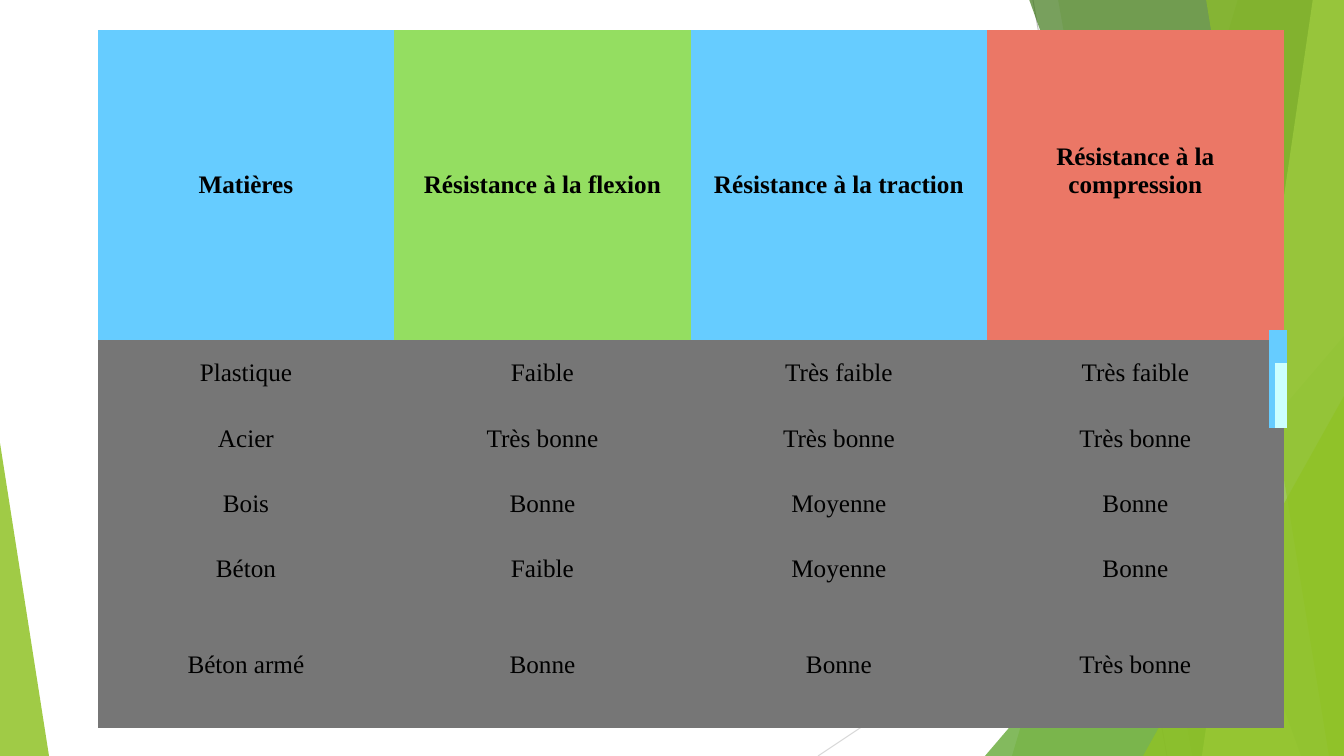
from lxml import etree
from pptx import Presentation, util as u
from pptx.dml.color import RGBColor
from pptx.enum import shapes, text
from pptx.oxml import ns

PX = 914400 / 100.8


def px(*nums):
    return [u.Emu(round(n * PX)) for n in nums]


def paint(fill, hue, alpha=100):
    fill.solid()
    fill.fore_color.rgb = RGBColor.from_string(hue)
    if alpha < 100:
        node = fill._xPr.find(".//" + ns.qn("a:srgbClr"))
        etree.SubElement(node, ns.qn("a:alpha"), val=str(alpha * 1000))


deck = Presentation()
deck.slide_width, deck.slide_height = px(1344, 756)
slide = deck.slides.add_slide(deck.slide_layouts[6])
art = slide.shapes

for ends, hue in [((1033, 0, 1167, 756), "BFBFBF"), ((1344, 406, 818, 756), "D9D9D9")]:
    line = art.add_connector(shapes.MSO_CONNECTOR.STRAIGHT, *px(*ends))
    paint(line.line.fill, hue)
    line.line.width = u.Pt(0.75)
    etree.SubElement(line._element.spPr, ns.qn("a:effectLst"))

bands = [
    ("blade", (1238, 1012), "90C226", 30),
    ("blade", (1058, 1192), "90C226", 20),
    ("wedge", (985, 336, 359, 420, 1), "54A021", 72),
    ("blade", (1029, 1301), "3F7819", 70),
    ("blade", (1313, 1202), "C0E474", 70),
    ("blade", (1206, 1329), "90C226", 65),
    ("wedge", (1143, 396, 201, 360, 1), "90C226", 80),
    ("wedge", (0, 443, 49, 313, 0), "90C226", 85),
]
for kind, spot, hue, alpha in bands:
    if kind == "blade":
        top, base = spot
        pen = art.build_freeform(top, -1, PX)
        pen.add_line_segments([(1344, -1), (1344, 756), (base, 756)], close=True)
        shape = pen.convert_to_shape()
    else:
        *box, tip = spot
        shape = art.add_shape(shapes.MSO_SHAPE.ISOSCELES_TRIANGLE, *px(*box))
        shape.adjustments[0] = tip
    paint(shape.fill, hue, alpha)
    shape.line.fill.background()
    shape.shadow.inherit = False

words = [
    ["Matières", "Résistance à la flexion", "Résistance à la traction", "Résistance à la compression"],
    ["Plastique", "Faible", "Très faible", "Très faible"],
    ["Acier", "Très bonne", "Très bonne", "Très bonne"],
    ["Bois", "Bonne", "Moyenne", "Bonne"],
    ["Béton", "Faible", "Moyenne", "Bonne"],
    ["Béton armé", "Bonne", "Bonne", "Très bonne"],
]
heads = ["66CCFF", "94DE61", "66CCFF", "EB7766"]
blue, pale = "66CCFF", "CCFFFF"
grids = [
    (98, 30, [296, 297, 296, 297], [310, 66, 65, 66, 65, 126], words, [heads] + [["767676"] * 4] * 5),
    (1269, 330, [6] * 3, [32] * 3, [[""] * 3] * 3, [[blue] * 3] + [[blue, pale, pale]] * 2),
]
pad = px(1)[0]
look = {"margin_left": pad, "margin_right": pad, "margin_top": pad, "margin_bottom": pad,
        "vertical_anchor": text.MSO_ANCHOR.MIDDLE}
for left, top, wide, tall, rows, hues in grids:
    frame = art.add_table(len(tall), len(wide), *px(left, top, sum(wide), sum(tall)))
    table = frame.table
    table.first_row = table.horz_banding = False
    table._tbl.tblPr.find(ns.qn("a:tableStyleId")).text = "{2D5ABB26-0587-4C30-8999-92F81FD0307C}"
    for col, size in zip(table.columns, px(*wide)):
        col.width = size
    for row, size in zip(table.rows, px(*tall)):
        row.height = size
    for r, row in enumerate(rows):
        for c, word in enumerate(row):
            cell = table.cell(r, c)
            paint(cell.fill, hues[r][c])
            for key, val in look.items():
                setattr(cell, key, val)
            if word:
                par = cell.text_frame.paragraphs[0]
                par.alignment = text.PP_ALIGN.CENTER
                run = par.add_run()
                run.text = word
                style = {"name": "Times New Roman", "size": u.Pt(18), "bold": r == 0}
                for key, val in style.items():
                    setattr(run.font, key, val)
                run.font.color.rgb = RGBColor.from_string("000000")
            if word == words[0][3]:
                cell.margin_bottom = px(29)[0]

deck.save("out.pptx")
